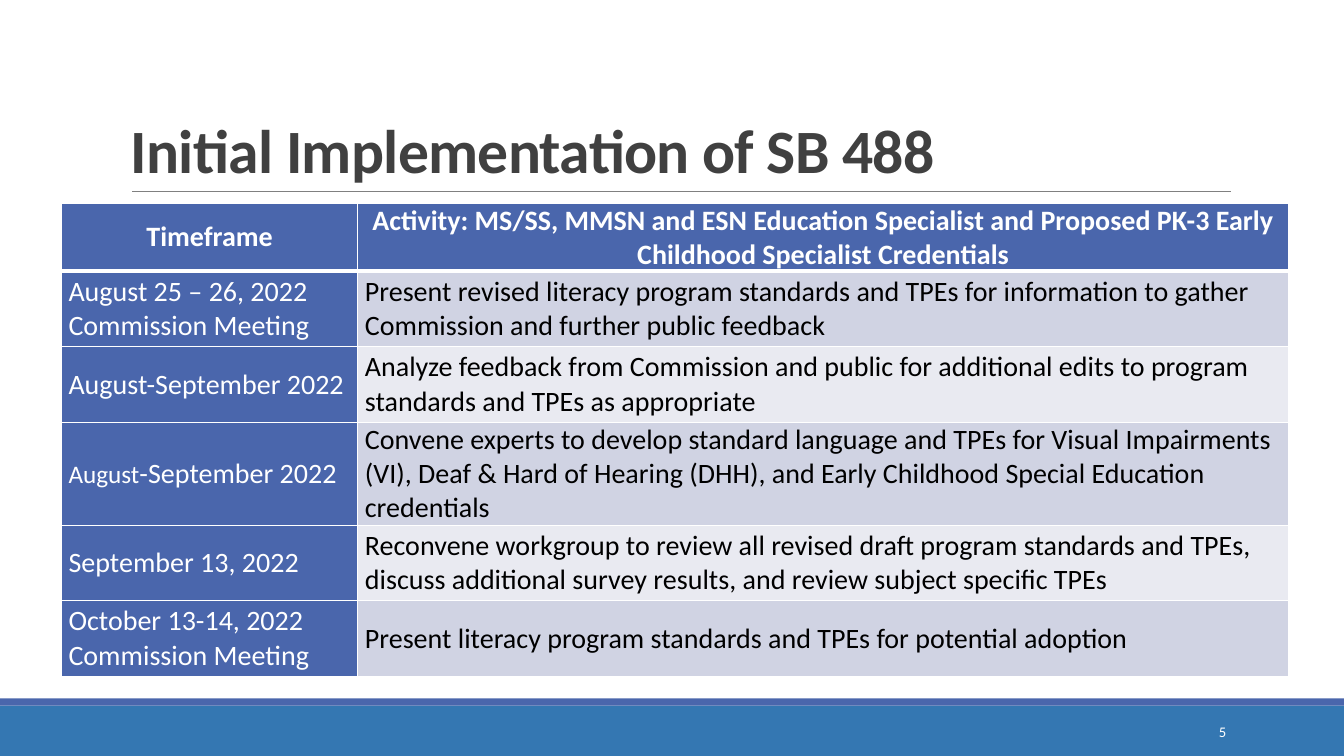
"""Build the slide with the timetable for the initial implementation of SB 488."""
import pptx
import pptx.dml.color
import pptx.enum.shapes
import pptx.enum.text
import pptx.oxml
import pptx.oxml.ns
import pptx.util

Inches = pptx.util.Inches
Pt = pptx.util.Pt
ALIGN = pptx.enum.text.PP_ALIGN
ANCHOR = pptx.enum.text.MSO_ANCHOR
NS = pptx.oxml.ns.nsdecls("a")
COLORS = {
    "white": "FFFFFF", "black": "000000", "title": "404040", "rule": "808080",
    "footer": "3477B2", "blue": "4A66AC", "odd": "D0D3E3", "even": "E9EAF1",
}


def color(name):
    return pptx.dml.color.RGBColor.from_string(COLORS[name])


def style(frame, size, name, bold=False, align=ALIGN.LEFT):
    for para in frame.paragraphs:
        para.alignment = align
        for run in para.runs:
            run.font.name = "Calibri"
            run.font.size = Pt(size)
            run.font.bold = bold
            run.font.color.rgb = color(name)


deck = pptx.Presentation()
deck.slide_width = Inches(13.33)
deck.slide_height = Inches(7.5)
slide = deck.slides.add_slide(deck.slide_layouts[6])
shapes = slide.shapes

for top, height, name in [(7, 0.5, "footer"), (6.93, 0.07, "blue")]:
    band = shapes.add_shape(pptx.enum.shapes.MSO_SHAPE.RECTANGLE,
                            0, Inches(top), Inches(13.33), Inches(height))
    band.shadow.inherit = False
    band.fill.solid()
    band.fill.fore_color.rgb = color(name)
    band.line.fill.background()

rule = shapes.add_connector(pptx.enum.shapes.MSO_CONNECTOR.STRAIGHT,
                            Inches(1.31), Inches(1.9), Inches(12.21), Inches(1.9))
rule.line.color.rgb = color("rule")
rule.line.width = Pt(0.5)
rule._element.spPr.append(pptx.oxml.parse_xml(f"<a:effectLst {NS}/>"))

title = shapes.add_textbox(Inches(1.2), Inches(0.31), Inches(11), Inches(1.59)).text_frame
title.word_wrap = True
title.vertical_anchor = ANCHOR.BOTTOM
title.text = "Initial Implementation of SB 488"
title.paragraphs[0].line_spacing = 0.85
style(title, 44, "title", bold=True)
title.paragraphs[0].runs[0].font._element.set("spc", "-50")

rows = [
    (0.67, "Timeframe",
     "Activity: MS/SS, MMSN and ESN Education Specialist and Proposed PK-3 Early "
     "Childhood Specialist Credentials"),
    (0.75, "August 25 – 26, 2022\nCommission Meeting",
     "Present revised literacy program standards and TPEs for information to gather "
     "Commission and further public feedback"),
    (0.75, "August-September 2022",
     "Analyze feedback from Commission and public for additional edits to program "
     "standards and TPEs as appropriate"),
    (1.02, "August",
     "Convene experts to develop standard language and TPEs for Visual Impairments "
     "(VI), Deaf & Hard of Hearing (DHH), and Early Childhood Special Education "
     "credentials"),
    (0.75, "September 13, 2022",
     "Reconvene workgroup to review all revised draft program standards and TPEs, "
     "discuss additional survey results, and review subject specific TPEs"),
    (0.75, "October 13-14, 2022\nCommission Meeting",
     "Present literacy program standards and TPEs for potential adoption"),
]
table = shapes.add_table(len(rows), 2, Inches(0.61), Inches(2.02),
                         Inches(12.17), Inches(4.69)).table
table.columns[0].width = Inches(2.94)
table.columns[1].width = Inches(9.23)

for r, (height, *texts) in enumerate(rows):
    table.rows[r].height = Inches(height)
    for c, text in enumerate(texts):
        cell = table.cell(r, c)
        cell.margin_left = cell.margin_right = Inches(0.07)
        cell.margin_top = cell.margin_bottom = 0
        cell.vertical_anchor = ANCHOR.MIDDLE
        frame = cell.text_frame
        frame.text = text
        if text == "August":
            frame.paragraphs[0].add_run().text = "-September 2022"
        dark = r == 0 or c == 0
        style(frame, 20, "white" if dark else "black", bold=r == 0,
              align=ALIGN.CENTER if r == 0 else ALIGN.LEFT)
        if text == "August":
            frame.paragraphs[0].runs[0].font.size = Pt(18)
        cell.fill.solid()
        cell.fill.fore_color.rgb = color("blue" if dark else "odd" if r % 2 else "even")
        for i, side in enumerate("LRTB"):
            thick = (r, side) in [(0, "B"), (1, "T")]
            edge = pptx.oxml.parse_xml(
                f'<a:ln{side} {NS} w="{Pt(3 if thick else 1)}"><a:solidFill>'
                f'<a:srgbClr val="{COLORS["white"]}"/></a:solidFill></a:ln{side}>')
            cell._tc.tcPr.insert(i, edge)

page = shapes.add_textbox(Inches(10.83), Inches(7.06), Inches(1.43), Inches(0.4)).text_frame
page.word_wrap = True
page.vertical_anchor = ANCHOR.MIDDLE
page.text = "5"
style(page, 10.5, "white", align=ALIGN.RIGHT)

deck.save("out.pptx")
